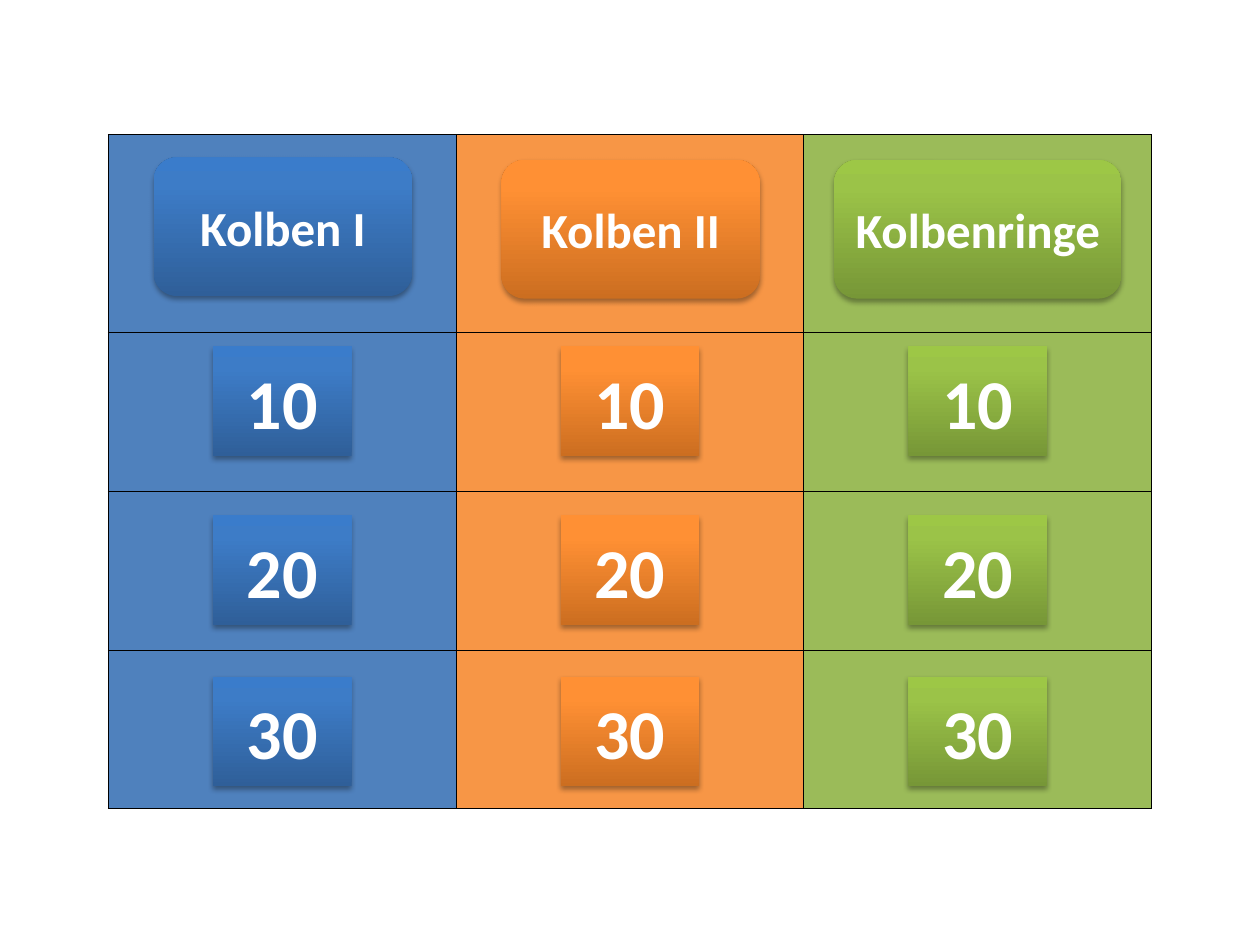
import copy
import dataclasses

import lxml.etree
import pptx
import pptx.dml.color
import pptx.enum.shapes
import pptx.enum.text
import pptx.oxml
import pptx.oxml.ns
import pptx.util

Inches = pptx.util.Inches
Pt = pptx.util.Pt
RGB = pptx.dml.color.RGBColor.from_string
SHAPE = pptx.enum.shapes.MSO_SHAPE
qn = pptx.oxml.ns.qn


@dataclasses.dataclass(frozen=True)
class Theme:
    font: str = "Calibri"
    text: str = "FFFFFF"
    border: str = "000000"
    shadow: str = "000000"
    border_width: float = 0.75
    title_size: int = 28
    points_size: int = 40
    cells: tuple = ("4F81BD", "F79646", "9BBB59")
    gradients: tuple = (
        ("2F5F99", "3D7CC7", "3A7CCB"),
        ("CC6E20", "FF9034", "FF9136"),
        ("779737", "9BC348", "9DC746"),
    )
    stops: tuple = (0, 0.8, 1)


def write_text(tf, text, size, font, color, bold=True):
    tf.word_wrap = True
    tf.margin_left = tf.margin_right = 0
    tf.vertical_anchor = pptx.enum.text.MSO_ANCHOR.MIDDLE
    p = tf.paragraphs[0]
    p.alignment = pptx.enum.text.PP_ALIGN.CENTER
    r = p.add_run()
    r.text = text
    r.font.size = Pt(size)
    r.font.name = font
    r.font.bold = bold
    r.font.color.rgb = RGB(color)


class Board:
    def __init__(self, prs, theme):
        self.theme = theme
        self.s = prs.slides.add_slide(prs.slide_layouts[6])

    def grid(self, left, top, col_width, row_heights):
        fills = self.theme.cells
        frame = self.s.shapes.add_table(
            len(row_heights), len(fills), Inches(left), Inches(top),
            Inches(col_width * len(fills)), Inches(sum(row_heights)))
        table = frame.table
        table.first_row = table.horz_banding = False
        for column in table.columns:
            column.width = Inches(col_width)
        for row, height in zip(table.rows, row_heights):
            row.height = Inches(height)
            for cell, color in zip(row.cells, fills):
                self.borders(cell)
                cell.fill.solid()
                cell.fill.fore_color.rgb = RGB(color)

    def borders(self, cell):
        tcPr = cell._tc.get_or_add_tcPr()
        for side in ("a:lnL", "a:lnR", "a:lnT", "a:lnB"):
            ln = lxml.etree.SubElement(
                tcPr, qn(side), w=str(Pt(self.theme.border_width)))
            fill = lxml.etree.SubElement(ln, qn("a:solidFill"))
            lxml.etree.SubElement(fill, qn("a:srgbClr"), val=self.theme.border)

    def button(self, kind, text, size, column, left, top, width, height):
        sp = self.s.shapes.add_shape(
            kind, Inches(left), Inches(top), Inches(width), Inches(height))
        self.gradient(sp, self.theme.gradients[column])
        sp.line.fill.background()
        self.shadow(sp)
        write_text(sp.text_frame, text, size=size,
                   font=self.theme.font, color=self.theme.text)

    def gradient(self, sp, colors):
        sp.fill.gradient()
        sp.fill.gradient_angle = 90
        stop_list = sp._element.spPr.find(".//" + qn("a:gsLst"))
        stop_list.append(copy.deepcopy(stop_list[-1]))
        for stop, color, position in zip(
                sp.fill.gradient_stops, colors, self.theme.stops):
            stop.color.rgb = RGB(color)
            stop.position = position

    def shadow(self, sp):
        sp.shadow.inherit = False
        effects = sp._element.spPr.find(qn("a:effectLst"))
        outer = lxml.etree.SubElement(
            effects, qn("a:outerShdw"), blurRad=str(Pt(3.1)),
            dist=str(Pt(1.8)), dir="5400000", rotWithShape="0")
        color = lxml.etree.SubElement(
            outer, qn("a:srgbClr"), val=self.theme.shadow)
        lxml.etree.SubElement(color, qn("a:alpha"), val="35000")


def main():
    prs = pptx.Presentation()
    prs.slide_width, prs.slide_height = Inches(10), Inches(7.5)
    theme = Theme()
    board = Board(prs, theme)

    left, col_width = 0.86, 2.76
    board.grid(left, 1.07, col_width, (1.57, 1.26, 1.26, 1.26))

    button_width, button_height = 1.1, 0.87
    for column in range(len(theme.cells)):
        x = left + column * col_width + (col_width - button_width) / 2
        for points, y in (("10", 2.75), ("20", 4.09), ("30", 5.37)):
            board.button(SHAPE.ACTION_BUTTON_CUSTOM, points, theme.points_size,
                         column, x, y, button_width, button_height)

    categories = (
        ("Kolben I", 1.22, 1.25, 2.05),
        ("Kolben II", 3.98, 1.27, 2.05),
        ("Kolbenringe", 6.62, 1.27, 2.28),
    )
    for column, (name, x, y, width) in enumerate(categories):
        board.button(SHAPE.ROUNDED_RECTANGLE, name, theme.title_size,
                     column, x, y, width, 1.1)

    prs.save("out.pptx")


if __name__ == "__main__":
    main()
